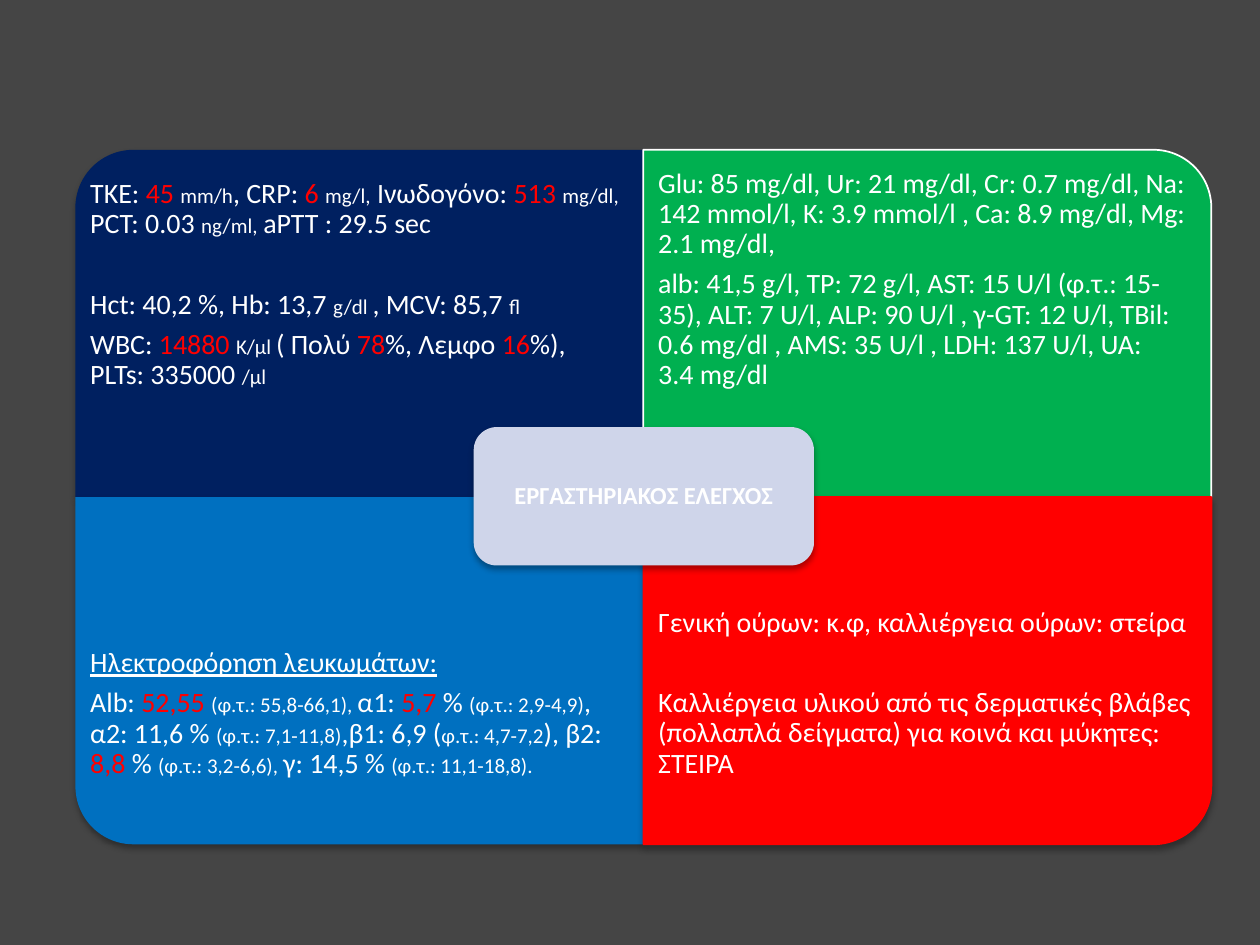
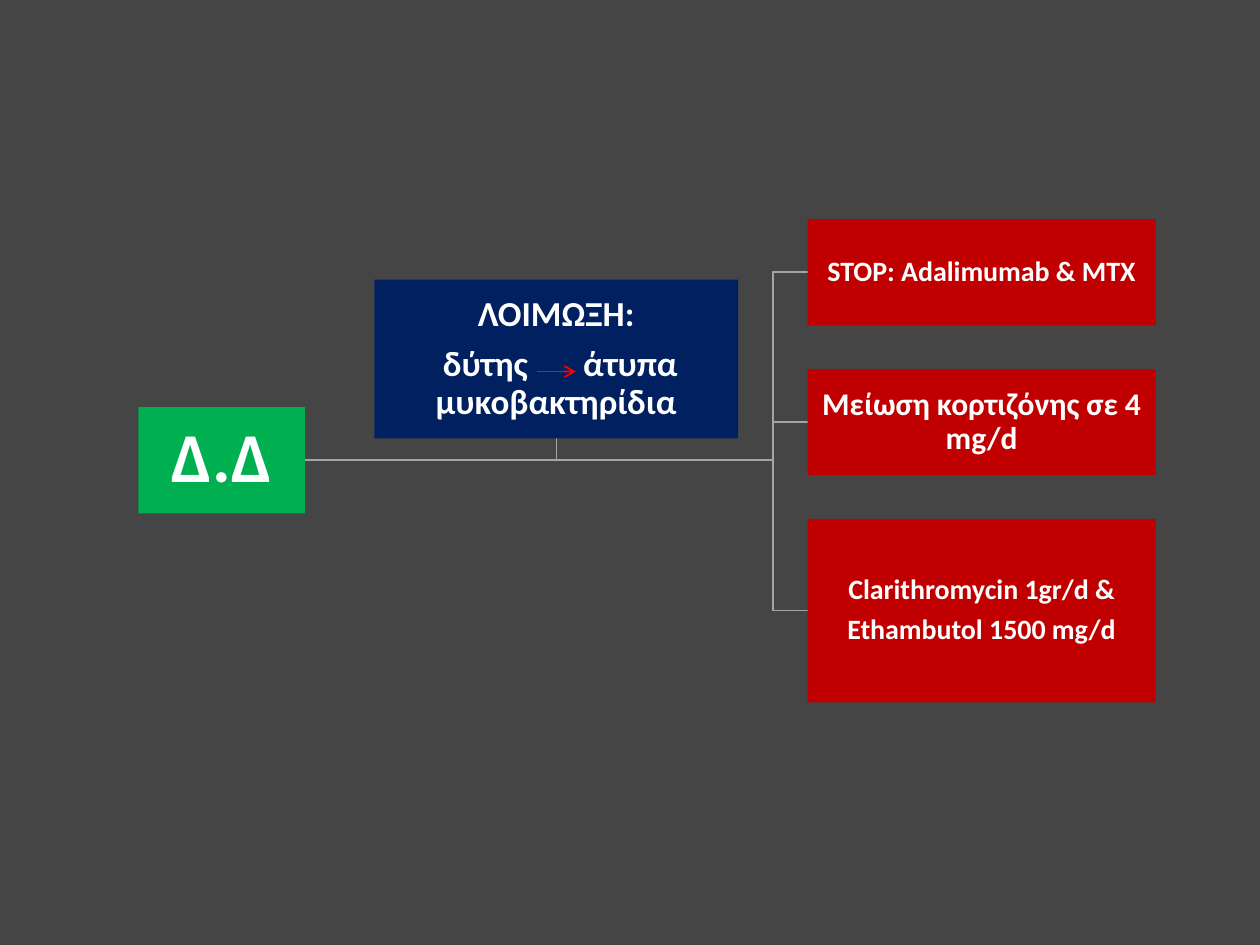
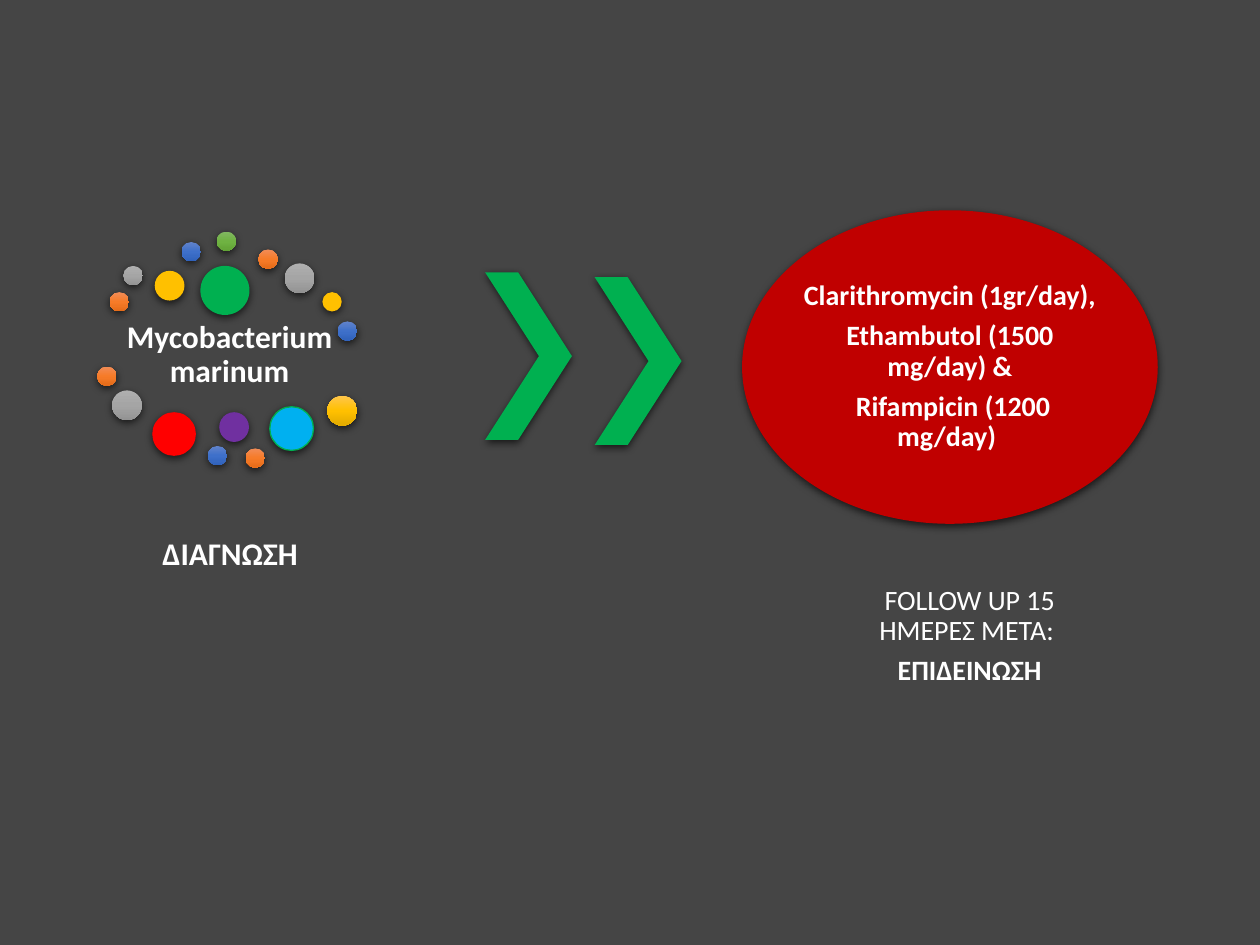
from copy import deepcopy

from lxml.etree import SubElement
from pptx import Presentation
from pptx.dml.color import RGBColor
from pptx.enum.shapes import MSO_CONNECTOR as Line, MSO_SHAPE as Preset
from pptx.enum.text import MSO_ANCHOR as Anchor, PP_ALIGN as Align
from pptx.oxml.ns import qn
from pptx.util import Cm, Pt

COLOURS = {
    "background": "454545", "white": "FFFFFF", "navy": "002060", "green": "00B050",
    "blue": "0070C0", "red": "FF0000", "dark red": "C00000", "pale": "CFD5EA",
    "grey": "A5A5A5", "gold": "FFC000", "purple": "7030A0", "sky": "00B0F0",
}
# Top, middle and bottom of each shaded dot
SHADES = {
    "shaded orange": ("F18C57", "F67B28", "E56C19"),
    "shaded grey": ("AFAFAF", "A5A5A5", "939393"),
    "shaded blue": ("6183CB", "3E70CA", "3062BB"),
    "shaded green": ("81B861", "6FB242", "62A336"),
    "shaded gold": ("FFC64B", "FFC000", "E3AB00"),
}
# Size, colour, bold, underline
STYLES = {
    "plain": (16, "white", False, False),
    "abnormal": (16, "red", False, False),
    "unit": (12, "white", False, False),
    "small": (14, "white", False, False),
    "underlined": (16, "white", False, True),
    "centre": (14, "white", True, False),
    "strong": (16, "white", True, False),
    "label": (18, "white", True, False),
    "infection": (20, "white", True, False),
    "huge": (40, "white", True, False),
}
# Opacity, blur and distance of the shadows
SOFT = (32000, 3.5, 2.2)
DEEP = (63000, 4.5, 1.5)


def add_block(slide, preset, box, fill, shadow=None, outline=None, weight=1):
    block = slide.shapes.add_shape(preset, *[Cm(length) for length in box])
    block.shadow.inherit = False
    if fill in SHADES:
        block.fill.gradient()
        block.fill.gradient_angle = 270
        stop_list = block._element.spPr.find(qn("a:gradFill")).find(qn("a:gsLst"))
        stop_list.insert(1, deepcopy(stop_list[0]))
        for i, stop in enumerate(block.fill.gradient_stops):
            stop.position = i / 2
            stop.color.rgb = RGBColor.from_string(SHADES[fill][i])
    else:
        block.fill.solid()
        block.fill.fore_color.rgb = RGBColor.from_string(COLOURS[fill])
    if outline:
        block.line.color.rgb = RGBColor.from_string(COLOURS[outline])
        block.line.width = Pt(weight)
    else:
        block.line.fill.background()
    if shadow:
        opacity, blur, distance = shadow
        effects = block._element.spPr.find(qn("a:effectLst"))
        outer = SubElement(effects, qn("a:outerShdw"), blurRad=str(Pt(blur)),
                           dist=str(Pt(distance)), dir="5400000", rotWithShape="0")
        black = SubElement(outer, qn("a:srgbClr"), val="000000")
        SubElement(black, qn("a:alpha"), val=str(opacity))
    return block


def write(holder, paragraphs, align=Align.CENTER, inset=0):
    frame = holder.text_frame
    frame.word_wrap = True
    frame.vertical_anchor = Anchor.MIDDLE
    frame.margin_left = frame.margin_right = Cm(inset)
    frame.margin_top = frame.margin_bottom = Cm(inset)
    for i, runs in enumerate(paragraphs):
        paragraph = frame.add_paragraph() if i else frame.paragraphs[0]
        paragraph.alignment = align
        paragraph.line_spacing = 0.9
        paragraph.space_after = Pt(0.35 * STYLES[runs[0][1]][0])
        for text, style in runs:
            if text is None:
                paragraph.add_line_break()
                continue
            size, colour, bold, underline = STYLES[style]
            run = paragraph.add_run()
            run.text = text
            run.font.name = "Calibri"
            run.font.size = Pt(size)
            run.font.bold = bold
            run.font.underline = underline
            run.font.color.rgb = RGBColor.from_string(COLOURS[colour])
    return frame


prs = Presentation()
prs.slide_width, prs.slide_height = Cm(25.4), Cm(19.05)
backdrop = prs.slide_master.background.fill
backdrop.solid()
backdrop.fore_color.rgb = RGBColor.from_string(COLOURS["background"])
blank = prs.slide_layouts[6]

# Slide 1: laboratory results in four panels
lab = prs.slides.add_slide(blank)
blood_count = [
    [("ΤΚΕ: ", "plain"), ("45 ", "abnormal"), ("mm/h", "unit"), (", CRP: ", "plain"),
     ("6 ", "abnormal"), ("mg/l,", "unit"), (" Ινωδογόνο: ", "plain"),
     ("513 ", "abnormal"), ("mg/dl,", "unit"), (" PCT: 0.03 ", "plain"),
     ("ng/ml,", "unit"), (" ", "small"), ("aPTT : 29.5 sec", "plain")],
    [("Hct: 40,2 %, Hb: 13,7 ", "plain"), ("g/dl ", "unit"),
     (", MCV: 85,7 ", "plain"), ("fl", "unit")],
    [("WBC: ", "plain"), ("14880 ", "abnormal"), ("K/μl ", "unit"),
     ("( Πολύ ", "plain"), ("78", "abnormal"), ("%, Λεμφο ", "plain"),
     ("16", "abnormal"), ("%), ", "plain"), (None, "plain"),
     ("PLTs: 335000 ", "plain"), ("/μl", "unit")],
]
biochemistry = [
    [("Glu: 85 mg/dl, Ur: 21 mg/dl, Cr: 0.7 mg/dl, Na: 142 mmol/l, K: 3.9 mmol/l , "
      "Ca: 8.9 mg/dl, Mg: 2.1 mg/dl,", "plain")],
    [("alb: 41,5 g/l, TP: 72 g/l, AST: 15 U/l (φ.τ.: 15-35), ALT: 7 U/l, "
      "ALP: 90 U/l , γ-GT: 12 U/l, TBil: 0.6 mg/dl , AMS: 35 U/l , "
      "LDH: 137 U/l, UA: ", "plain"), (None, "plain"), ("3.4 mg/dl", "plain")],
]
electrophoresis = [
    [("Ηλεκτροφόρηση λευκωμάτων:", "underlined")],
    [("Alb: ", "plain"), ("52,55 ", "abnormal"), ("(φ.τ.: 55,8-66,1), ", "unit"),
     ("α1: ", "plain"), ("5,7 ", "abnormal"), ("% ", "plain"),
     ("(φ.τ.: 2,9-4,9)", "unit"), (", α2: 11,6 % ", "plain"),
     ("(φ.τ.: 7,1-11,8)", "unit"), (",β1: 6,9 (", "plain"),
     ("φ.τ.: 4,7-7,2", "unit"), ("), β2: ", "plain"), ("8,8", "abnormal"),
     (" % ", "plain"), ("(φ.τ.: 3,2-6,6), ", "unit"), ("γ: 14,5 % ", "plain"),
     ("(φ.τ.: 11,1-18,8).", "unit")],
]
cultures = [
    [("Γενική ούρων: κ.φ, καλλιέργεια ούρων: στείρα", "plain")],
    [("Καλλιέργεια υλικού από τις δερματικές βλάβες (πολλαπλά δείγματα) για κοινά "
      "και μύκητες: ΣΤΕΙΡΑ", "plain")],
]
# Results, fill, outline, shadow, rotation, gap before second paragraph, text shift
panels = [
    (blood_count, "navy", None, SOFT, 270, 23, 0.1),
    (biochemistry, "green", "white", None, 0, 0, 0),
    (electrophoresis, "blue", None, SOFT, 180, 0, 0),
    (cultures, "red", "red", SOFT, 90, 23, -0.41),
]
panel_w, panel_h = 11.45, 7
for i, (results, fill, outline, shadow, turn, gap, shift) in enumerate(panels):
    row, column = divmod(i, 2)
    left, top = 1.52 + column * panel_w, 3.02 + row * panel_h
    w, h = (panel_h, panel_w) if turn in (90, 270) else (panel_w, panel_h)
    box = (left + (panel_w - w) / 2, top + (panel_h - h) / 2, w, h)
    panel = add_block(lab, Preset.ROUND_1_RECTANGLE, box, fill, shadow, outline)
    panel.rotation = turn
    text_top = top + row * panel_h / 4 + shift
    values = lab.shapes.add_textbox(Cm(left), Cm(text_top), Cm(panel_w), Cm(panel_h * 0.75))
    frame = write(values, results, Align.LEFT, 0.3)
    frame.paragraphs[1].space_before = Pt(gap)

heading = add_block(lab, Preset.ROUNDED_RECTANGLE, (9.55, 8.61, 6.86, 2.79), "pale", SOFT)
write(heading, [[("ΕΡΓΑΣΤΗΡΙΑΚΟΣ ΕΛΕΓΧΟΣ", "centre")]], inset=0.15)

# Slide 2: differential diagnosis tree
tree = prs.slides.add_slide(blank)
treatments = [
    (2.14, [[("STOP: Adalimumab & MTX", "strong")]]),
    (2.14, [[("Μείωση κορτιζόνης σε 4 mg/d", "label")]]),
    (3.7, [[("Clarithromycin 1gr/d &", "strong")], [("Ethambutol 1500 mg/d", "strong")]]),
]
root_right, trunk_y, fork_x, treatment_left = 6.15, 9.28, 15.59, 16.28

# Branches from the root, then the boxes above them
branches = [[(11.22, trunk_y), (11.22, 8.84)]]
treatment_boxes = []
top = 4.42
for height, lines in treatments:
    middle = top + height / 2
    branches.append([(fork_x, trunk_y), (fork_x, middle), (treatment_left, middle)])
    treatment_boxes.append(((treatment_left, top, 7.02, height), lines))
    top += height + 0.88
for points in branches:
    builder = tree.shapes.build_freeform(Cm(root_right), Cm(trunk_y))
    builder.add_line_segments([(Cm(x), Cm(y)) for x, y in points], close=False)
    branch = builder.convert_to_shape()
    branch.shadow.inherit = False
    branch.fill.background()
    branch.line.color.rgb = RGBColor.from_string(COLOURS["grey"])
    branch.line.width = Pt(1)

diagnosis = add_block(tree, Preset.RECTANGLE, (2.79, 8.21, 3.36, 2.14), "green")
write(diagnosis, [[("Δ.Δ", "huge")]], inset=0.08)
for box, lines in treatment_boxes:
    write(add_block(tree, Preset.RECTANGLE, box, "dark red"), lines, inset=0.03)

infection = add_block(tree, Preset.RECTANGLE, (7.55, 5.64, 7.33, 3.2), "navy")
frame = write(infection, [
    [("ΛΟΙΜΩΞΗ:", "infection")],
    [(" δύτης", "infection"), (" ", "infection"), ("άτυπα μυκοβακτηρίδια", "infection")],
], inset=0.03)
# Widened space that holds the arrow
frame.paragraphs[1].runs[1]._r.get_or_add_rPr().set("spc", "2700")

arrow = tree.shapes.add_connector(Line.STRAIGHT, Cm(10.82), Cm(7.49), Cm(11.61), Cm(7.49))
arrow.line.color.rgb = RGBColor.from_string(COLOURS["red"])
arrow.line.width = Pt(1)
SubElement(arrow.line._get_or_add_ln(), qn("a:tailEnd"), type="arrow")
SubElement(arrow._element.spPr, qn("a:effectLst"))

# Slide 3: diagnosis, treatment and follow-up
outcome = prs.slides.add_slide(blank)
captions = [
    ((1.9, 6.38, 5.46, 1.57), [[("Mycobacterium marinum", "label")]]),
    ((2.24, 9.7, 4.8, 2.97), [[("ΔΙΑΓΝΩΣΗ", "label")]]),
    ((17.15, 11.35, 4.8, 2.97), [[("FOLLOW UP 15 ΗΜΕΡΕΣ ΜΕΤΑ: ", "plain")],
                                 [("ΕΠΙΔΕΙΝΩΣΗ", "strong")]]),
]
for box, lines in captions:
    caption = outcome.shapes.add_textbox(*[Cm(length) for length in box])
    write(caption, lines, inset=0.06)

# Ring of bacteria: left, top, diameter, fill
tiny, medium, large, largest = 0.39, 0.6, 0.88, 0.99
bacteria = [
    (2.21, 5.89, tiny, "shaded orange"), (2.49, 5.36, tiny, "shaded grey"),
    (3.12, 5.46, medium, "gold"), (3.66, 4.88, tiny, "shaded blue"),
    (4.37, 4.67, tiny, "shaded green"), (5.21, 5.03, tiny, "shaded orange"),
    (5.74, 5.31, medium, "shaded grey"), (6.5, 5.89, tiny, "gold"),
    (6.81, 6.48, tiny, "shaded blue"), (4.04, 5.36, largest, "green"),
    (1.96, 7.39, tiny, "shaded orange"), (2.26, 7.87, medium, "shaded grey"),
    (3.07, 8.31, large, "red"), (4.19, 8.99, tiny, "shaded blue"),
    (4.42, 8.31, medium, "purple"), (4.95, 9.04, tiny, "shaded orange"),
    (5.44, 8.2, large, "sky"), (6.6, 7.98, medium, "shaded gold"),
]
for left, top, diameter, fill in bacteria:
    rim = "green" if fill == "sky" else None
    add_block(outcome, Preset.OVAL, (left, top, diameter, diameter), fill, DEEP, rim, 0.75)

# Chevrons lead to the treatment
for left, top in [(9.78, 5.49), (11.99, 5.59)]:
    chevron = add_block(outcome, Preset.CHEVRON, (left, top, 1.75, 3.38), "green", DEEP)
    chevron.adjustments[0] = 0.62

therapy = add_block(outcome, Preset.OVAL, (14.96, 4.24, 8.38, 6.32), "dark red", DEEP)
write(therapy, [
    [("Clarithromycin (1gr/day), ", "strong")],
    [("Ethambutol (1500 mg/day) &", "strong")],
    [(" Rifampicin (1200 mg/day) ", "strong")],
])

prs.save("out.pptx")
